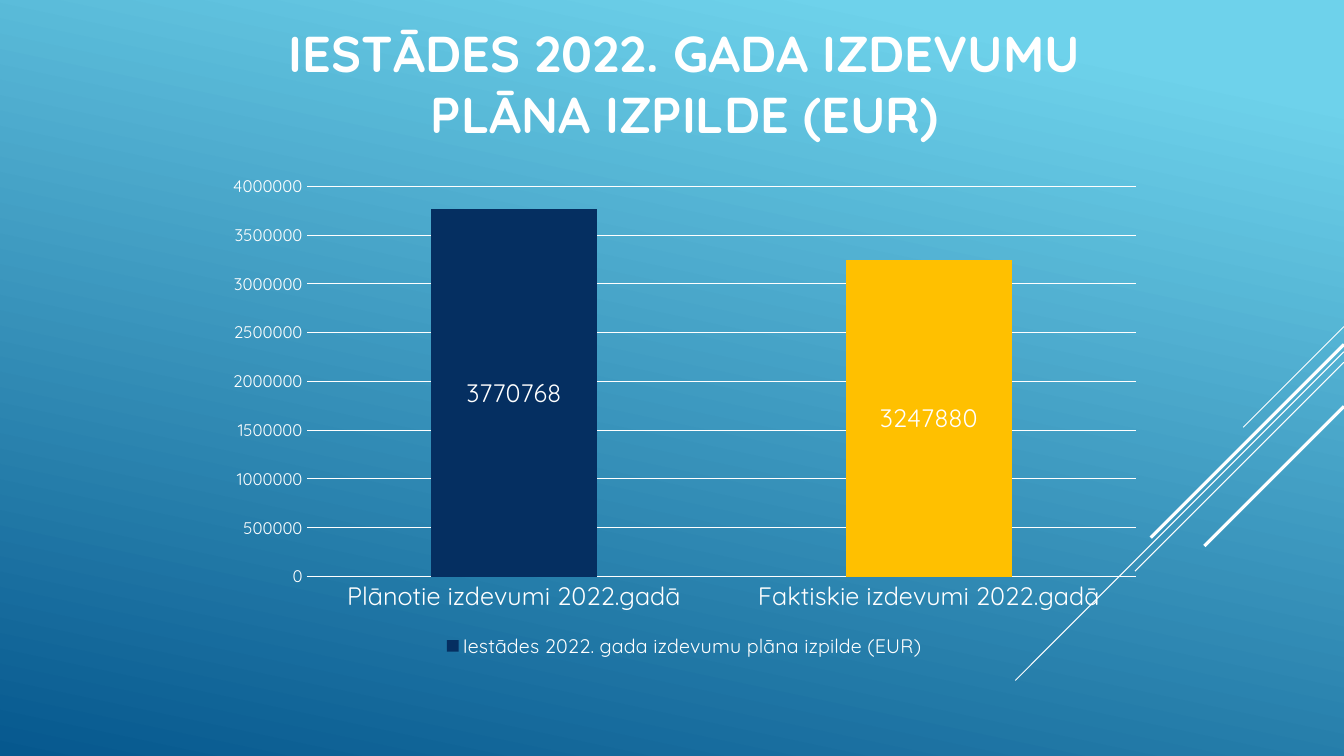
from pptx import Presentation
from pptx.chart.data import CategoryChartData
from pptx.dml.color import RGBColor
from pptx.enum.chart import (XL_CHART_TYPE, XL_LABEL_POSITION,
                             XL_LEGEND_POSITION, XL_TICK_MARK)
from pptx.enum.shapes import MSO_CONNECTOR
from pptx.enum.text import MSO_ANCHOR, PP_ALIGN
from pptx.oxml.ns import qn
from pptx.util import Emu, Pt
from lxml import etree

COLUMN_STACKED = XL_CHART_TYPE.COLUMN_STACKED
LABEL_CENTER = XL_LABEL_POSITION.CENTER
LEGEND_BOTTOM = XL_LEGEND_POSITION.BOTTOM
NO_TICK = XL_TICK_MARK.NONE
STRAIGHT = MSO_CONNECTOR.STRAIGHT
MIDDLE = MSO_ANCHOR.MIDDLE
CENTER = PP_ALIGN.CENTER

EMU_PER_PX = 9525
SLIDE_W, SLIDE_H = 1280, 720
CONTENT_X, CONTENT_W = 204, 896
TITLE_H, CHART_H = 158, 473

FONT = "Quicksand"
WHITE, NAVY, AMBER = "FFFFFF", "052F61", "FFC000"
SKY, DEEP_BLUE = "6ED2EB", "06588E"

# start height on the right edge, horizontal run, line width in points
DIAGONALS = [(311, 96, 0.75), (335, 313, 0.75), (345, 199, 0.75),
             (328, 184, 2.25), (387, 133, 2.25)]
EXPENSES = {"Plānotie izdevumi 2022.gadā": (3770768, NAVY),
            "Faktiskie izdevumi 2022.gadā": (3247880, AMBER)}


def px(length):
    return Emu(length * EMU_PER_PX)


def rgb(hex_color):
    return RGBColor.from_string(hex_color)


def set_attributes(target, values):
    for name, value in values.items():
        setattr(target, name, value)


def style_font(font, size, bold=False):
    set_attributes(font, {"name": FONT, "size": Pt(size), "bold": bold})
    font.color.rgb = rgb(WHITE)


def style_line(line, width):
    line.color.rgb = rgb(WHITE)
    line.width = Pt(width)


def paint_background(slide):
    fill = slide.background.fill
    fill.gradient()
    fill.gradient_angle = 258
    for stop, color, position in zip(fill.gradient_stops, (SKY, DEEP_BLUE), (0.1, 1)):
        stop.color.rgb = rgb(color)
        stop.position = position


def add_diagonals(slide, right):
    """Draw the 45-degree lines running down and left from the right edge."""
    for top, run, width in DIAGONALS:
        diagonal = slide.shapes.add_connector(
            STRAIGHT, px(right), px(top), px(right - run), px(top + run))
        style_line(diagonal.line, width)
        etree.SubElement(diagonal._element.spPr, qn("a:effectLst"))


def add_title(slide, x, y, w, h):
    frame = slide.shapes.add_textbox(px(x), px(y), px(w), px(h)).text_frame
    set_attributes(frame, {"word_wrap": True, "vertical_anchor": MIDDLE})
    heading = frame.paragraphs[0]
    heading.alignment = CENTER
    run = heading.add_run()
    run.text = "IESTĀDES 2022. GADA IZDEVUMU PLĀNA IZPILDE (EUR)"
    style_font(run.font, 36, bold=True)


def add_expense_chart(slide, x, y, w, h):
    amounts, colors = zip(*EXPENSES.values())
    data = CategoryChartData()
    data.categories = list(EXPENSES)
    data.add_series("Iestādes 2022. gada izdevumu plāna izpilde (EUR)", amounts)
    chart = slide.shapes.add_chart(
        COLUMN_STACKED, px(x), px(y), px(w), px(h), data).chart
    set_attributes(chart, {"has_title": False, "has_legend": True})
    style_font(chart.font, 10)

    set_attributes(chart.legend, {"position": LEGEND_BOTTOM, "include_in_layout": False})
    style_font(chart.legend.font, 14)

    for axis, size in ((chart.category_axis, 18), (chart.value_axis, 12)):
        set_attributes(axis, {"major_tick_mark": NO_TICK, "minor_tick_mark": NO_TICK})
        style_font(axis.tick_labels.font, size)
    style_line(chart.category_axis.format.line, 0.75)
    amount_axis = chart.value_axis
    set_attributes(amount_axis, {"minimum_scale": 0, "has_major_gridlines": True})
    amount_axis.format.line.fill.background()
    style_line(amount_axis.major_gridlines.format.line, 0.75)

    plot = chart.plots[0]
    set_attributes(plot, {"gap_width": 150, "overlap": 100, "vary_by_categories": False})
    expenses = plot.series[0]
    expenses.format.fill.solid()
    expenses.format.fill.fore_color.rgb = rgb(colors[0])
    actual = expenses.points[1].format.fill
    actual.solid()
    actual.fore_color.rgb = rgb(colors[1])
    labels = expenses.data_labels
    set_attributes(labels, {"show_value": True, "position": LABEL_CENTER})
    style_font(labels.font, 18)


def build_expense_slide(presentation):
    slide = presentation.slides.add_slide(presentation.slide_layouts[6])
    paint_background(slide)
    add_diagonals(slide, SLIDE_W)
    add_expense_chart(slide, CONTENT_X, TITLE_H, CONTENT_W, CHART_H)
    add_title(slide, CONTENT_X, 0, CONTENT_W, TITLE_H)


def main():
    presentation = Presentation()
    set_attributes(presentation, {"slide_width": px(SLIDE_W), "slide_height": px(SLIDE_H)})
    build_expense_slide(presentation)
    presentation.save("out.pptx")


if __name__ == "__main__":
    main()
